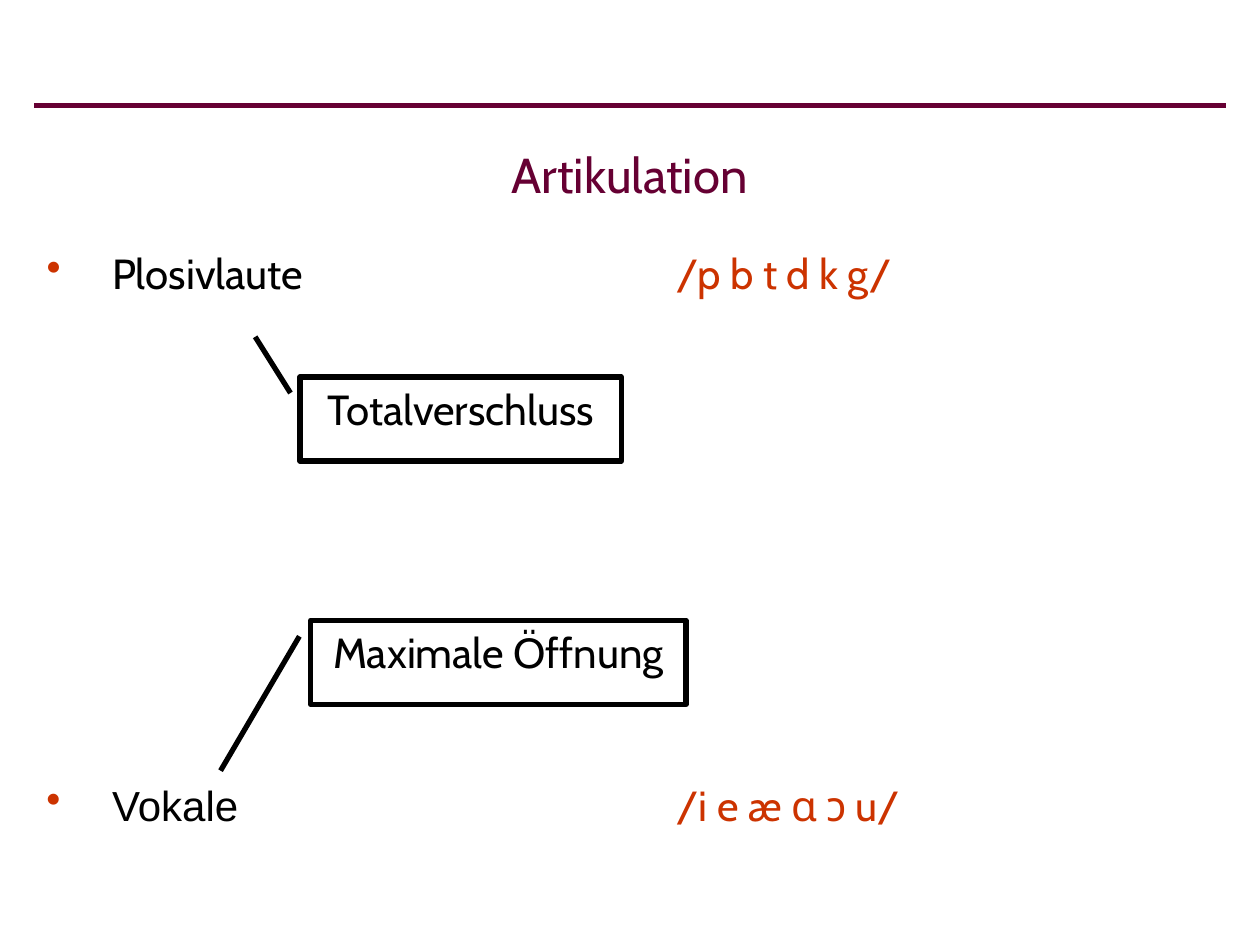
from lxml.etree import SubElement
from pptx import Presentation
from pptx.dml.color import RGBColor
from pptx.enum.shapes import MSO_CONNECTOR, MSO_SHAPE
from pptx.enum.text import MSO_ANCHOR, PP_ALIGN
from pptx.oxml.ns import qn
from pptx.util import Pt

BLACK = "000000"
WHITE = "FFFFFF"
PLUM = "660033"
RUST = "CC3300"
MARGIN = 19.5
RULE_Y = 60.5
HANGING = 37.5
TAB_STOP = 360


def color(hex_string):
    return RGBColor.from_string(hex_string)


def style(font, name, size, hex_string):
    font.name = name
    font.size = Pt(size)
    font.color.rgb = color(hex_string)


def add_rule(slide, left, right, y):
    rule = slide.shapes.add_connector(
        MSO_CONNECTOR.STRAIGHT, Pt(left), Pt(y), Pt(right), Pt(y))
    rule.line.color.rgb = color(PLUM)
    rule.line.width = Pt(3)
    SubElement(rule._element.spPr, qn("a:effectLst"))


def add_text_frame(slide, left, top, width, height):
    frame = slide.shapes.add_textbox(
        Pt(left), Pt(top), Pt(width), Pt(height)).text_frame
    frame.word_wrap = True
    return frame


def add_title(slide, wording):
    frame = add_text_frame(slide, MARGIN, RULE_Y, 680.5, 77.5)
    frame.vertical_anchor = MSO_ANCHOR.MIDDLE
    title = frame.paragraphs[0]
    title.text = wording
    title.alignment = PP_ALIGN.CENTER
    style(title.font, "Cabin", 28, PLUM)


def add_sound_row(slide, top, width, sound_class, class_font, phonemes):
    row = add_text_frame(slide, MARGIN, top, width, 42).paragraphs[0]
    properties = row._p.get_or_add_pPr()
    properties.set("marL", str(Pt(HANGING)))
    properties.set("indent", str(-Pt(HANGING)))
    bullet_color = SubElement(properties, qn("a:buClr"))
    SubElement(bullet_color, qn("a:srgbClr"), val=RUST)
    SubElement(properties, qn("a:buChar"), char="•")
    tabs = SubElement(properties, qn("a:tabLst"))
    SubElement(tabs, qn("a:tab"), pos=str(Pt(TAB_STOP)), algn="l")
    for wording, font_name, hex_string in (
            (sound_class + "\t", class_font, BLACK), (phonemes, "Cabin", RUST)):
        run = row.add_run()
        run.text = wording
        style(run.font, font_name, 24, hex_string)


def add_callout(slide, left, top, width, wording, pointer):
    callout = slide.shapes.add_shape(
        MSO_SHAPE.LINE_CALLOUT_1, Pt(left), Pt(top), Pt(width), Pt(48))
    for index, value in enumerate(pointer):
        callout.adjustments[index] = value
    callout.shadow.inherit = False
    callout.fill.solid()
    callout.fill.fore_color.rgb = color(WHITE)
    callout.line.color.rgb = color(BLACK)
    callout.line.width = Pt(3)
    frame = callout.text_frame
    frame.word_wrap = True
    frame.vertical_anchor = MSO_ANCHOR.TOP
    label = frame.paragraphs[0]
    label.text = wording
    label.alignment = PP_ALIGN.CENTER
    style(label.font, "Cabin", 24, BLACK)


def main():
    presentation = Presentation()
    presentation.slide_width = Pt(720)
    presentation.slide_height = Pt(540)
    slide = presentation.slides.add_slide(presentation.slide_layouts[6])

    add_rule(slide, MARGIN, 720 - MARGIN, RULE_Y)
    add_title(slide, "Artikulation")
    add_sound_row(slide, 138, 682.5, "Plosivlaute", "Cabin", "/p b t d k g/")
    add_sound_row(slide, 442, 612, "Vokale", "Arial", "/i e æ ɑ ɔ u/")
    add_callout(slide, 171.5, 215.5, 183.5, "Totalverschluss",
                (0.19, -0.03, -0.48, -0.14))
    add_callout(slide, 177.5, 354.5, 214.5, "Maximale Öffnung",
                (0.19, -0.03, 1.79, -0.24))

    presentation.save("out.pptx")


if __name__ == "__main__":
    main()
